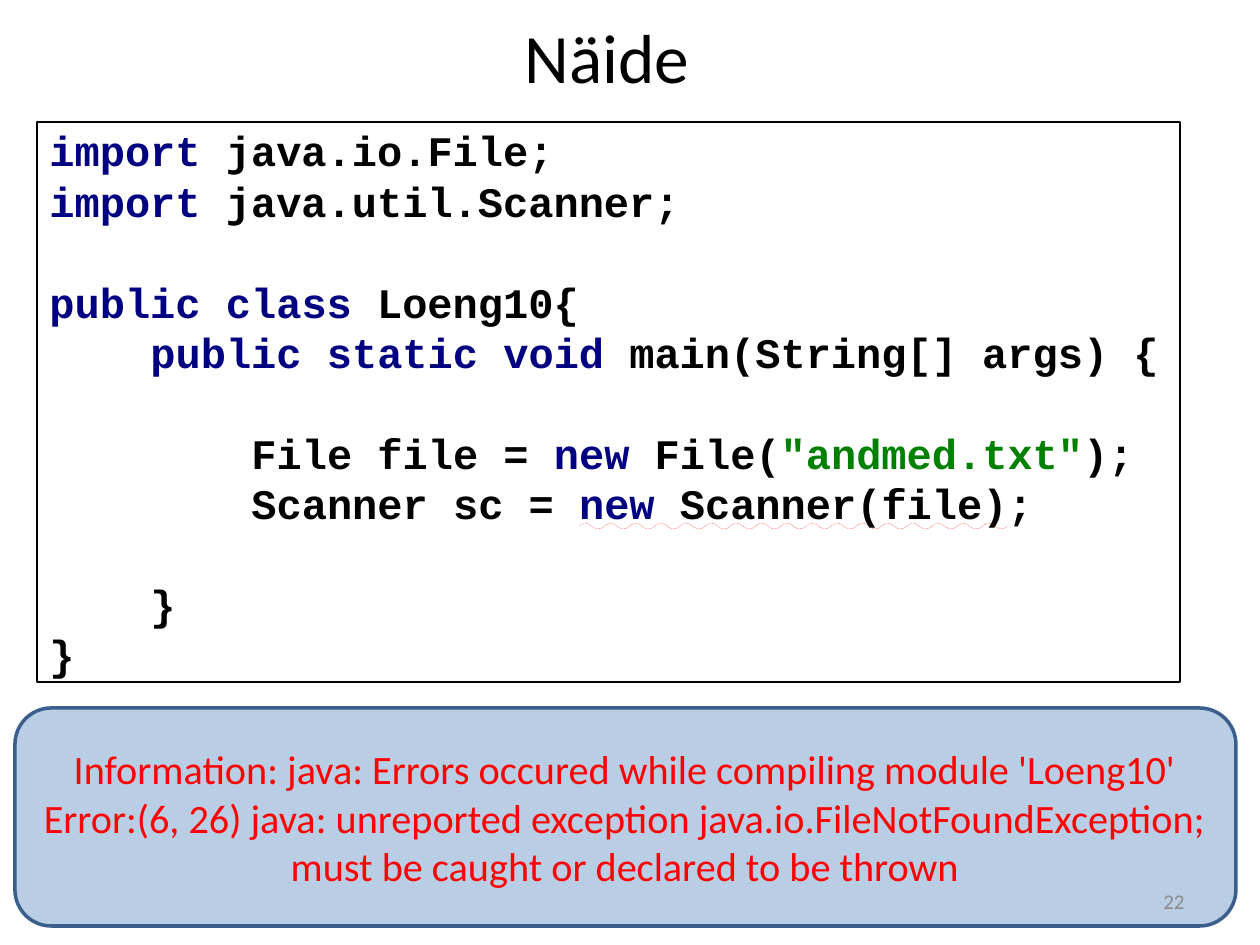
from lxml import etree
from pptx import Presentation
from pptx.dml.color import RGBColor
from pptx.enum.shapes import MSO_SHAPE as Shape
from pptx.enum.text import MSO_ANCHOR as Anchor, MSO_UNDERLINE as Underline, PP_ALIGN as Align
from pptx.oxml.ns import qn
from pptx.util import Emu, Pt

PX = 914400 / 126

BLACK = RGBColor(0x00, 0x00, 0x00)
WHITE = RGBColor(0xFF, 0xFF, 0xFF)
KEYWORD = RGBColor(0x00, 0x00, 0x80)
STRING = RGBColor(0x00, 0x80, 0x00)
RED = RGBColor(0xFF, 0x00, 0x00)
PALE_BLUE = RGBColor(0xB9, 0xCD, 0xE5)
DARK_BLUE = RGBColor(0x3A, 0x5F, 0x8C)
GREY = RGBColor(0x8C, 0x8C, 0x8C)


def px(length):
    return Emu(round(length * PX))


def add_run(paragraph, text, size, color, font="Calibri"):
    run = paragraph.add_run()
    run.text = text
    run.font.size = Pt(size)
    run.font.name = font
    run.font.color.rgb = color
    return run


prs = Presentation()
prs.slide_width, prs.slide_height = px(1260), px(945)
slide = prs.slides.add_slide(prs.slide_layouts[6])
shapes = slide.shapes

# Title
title = shapes.add_textbox(px(64), px(16), px(1086), px(80)).text_frame
title.word_wrap = True
title.vertical_anchor = Anchor.MIDDLE
title.paragraphs[0].alignment = Align.CENTER
add_run(title.paragraphs[0], "Näide", 39.6, BLACK)

# Code listing: indent level, blank lines above, then the coloured parts
CODE = [
    (0, 0, [("import ", KEYWORD), ("java.io.File;", BLACK)]),
    (0, 0, [("import ", KEYWORD), ("java.util.Scanner;", BLACK)]),
    (0, 1, [("public class ", KEYWORD), ("Loeng10{", BLACK)]),
    (1, 0, [("public static void ", KEYWORD), ("main(String[] args) {", BLACK)]),
    (2, 1, [("File file = ", BLACK), ("new ", KEYWORD), ("File(", BLACK),
            ('"andmed.txt"', STRING), (");", BLACK)]),
    (2, 0, [("Scanner sc = ", BLACK), ("new ", KEYWORD),
            ("Scanner(file)", BLACK), (";", BLACK)]),
    (1, 1, [("}", BLACK)]),
    (0, 0, [("}", BLACK)]),
]
ERROR_LINE = 5
ERROR_PARTS = (1, 2)
LINE_HEIGHT = 28.8
INDENT = 101

listing = shapes.add_shape(Shape.RECTANGLE, px(37), px(116 + 6), px(1143), px(560))
listing.shadow.inherit = False
listing.fill.solid()
listing.fill.fore_color.rgb = WHITE
listing.line.color.rgb = BLACK
listing.line.width = Pt(0.75)
code = listing.text_frame
code.word_wrap = True
code.vertical_anchor = Anchor.MIDDLE
for number, (level, blanks, parts) in enumerate(CODE):
    line = code.paragraphs[0] if number == 0 else code.add_paragraph()
    line.alignment = Align.LEFT
    line.line_spacing = Pt(LINE_HEIGHT)
    line.space_before = Pt(LINE_HEIGHT * blanks)
    properties = line._p.get_or_add_pPr()
    properties.set("marL", str(px(INDENT * level)))
    properties.set("indent", "0")
    for position, (text, color) in enumerate(parts):
        run = add_run(line, text, 24, color, "Courier New")
        run.font.bold = True
        if number == ERROR_LINE and position in ERROR_PARTS:
            run.font.underline = Underline.WAVY_LINE
            underline_fill = etree.Element(qn("a:uFill"))
            solid = etree.SubElement(underline_fill, qn("a:solidFill"))
            etree.SubElement(solid, qn("a:srgbClr"), val=str(RED))
            run._r.rPr.find(qn("a:latin")).addprevious(underline_fill)

# Compiler message
MESSAGES = [
    "Information: java: Errors occured while compiling module 'Loeng10'",
    "Error:(6, 26) java: unreported exception java.io.FileNotFoundException; "
    "must be caught or declared to be thrown",
]
callout = shapes.add_shape(Shape.ROUNDED_RECTANGLE, px(15), px(708), px(1221), px(218))
callout.shadow.inherit = False
callout.fill.solid()
callout.fill.fore_color.rgb = PALE_BLUE
callout.line.color.rgb = DARK_BLUE
callout.line.width = Pt(2)
error = callout.text_frame
error.word_wrap = True
error.vertical_anchor = Anchor.MIDDLE
for number, message in enumerate(MESSAGES):
    paragraph = error.paragraphs[0] if number == 0 else error.add_paragraph()
    paragraph.alignment = Align.CENTER
    add_run(paragraph, message, 23, RED)

# Slide number
page = shapes.add_textbox(px(903), px(876), px(294), px(50)).text_frame
page.word_wrap = True
page.vertical_anchor = Anchor.MIDDLE
page.paragraphs[0].alignment = Align.RIGHT
add_run(page.paragraphs[0], "22", 12, GREY)

prs.save("out.pptx")
